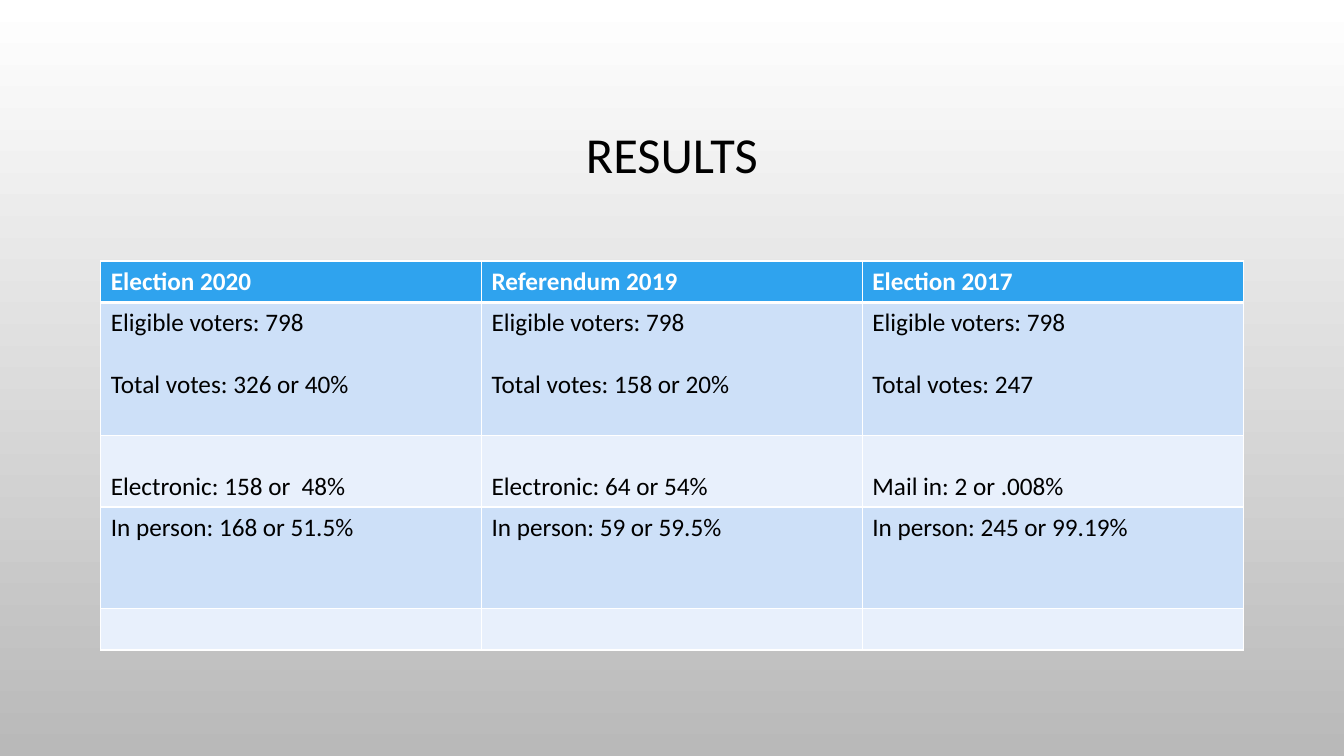
from lxml import etree
from pptx import Presentation
from pptx.dml.color import RGBColor
from pptx.enum.text import MSO_ANCHOR, PP_ALIGN
from pptx.oxml.ns import qn
from pptx.util import Inches, Pt

CENTER = PP_ALIGN.CENTER
TOP, MIDDLE, BOTTOM = MSO_ANCHOR.TOP, MSO_ANCHOR.MIDDLE, MSO_ANCHOR.BOTTOM
TITLE_ONLY = 5

HEADINGS = ["Election 2020", "Referendum 2019", "Election 2017"]
TURNOUT = [
    "Eligible voters: 798\nTotal votes: 326 or 40%",
    "Eligible voters: 798\nTotal votes: 158 or 20%",
    "Eligible voters: 798\nTotal votes: 247",
]
REMOTE = ["Electronic: 158 or  48%", "Electronic: 64 or 54%", "Mail in: 2 or .008%"]
IN_PERSON = ["In person: 168 or 51.5%", "In person: 59 or 59.5%", "In person: 245 or 99.19%"]

# Texts, row height in inches, vertical anchor
RESULT_ROWS = [
    (HEADINGS, 0.41, TOP),
    (TURNOUT, 1.32, TOP),
    (REMOTE, 0.71, BOTTOM),
    (IN_PERSON, 1.01, TOP),
    ([""] * 3, 0.41, TOP),
]


def rgb(value):
    return RGBColor.from_string(value)


class ResultsSlide:
    font = "Calibri"
    ink = "000000"
    white = "FFFFFF"
    header_fill = "2FA3EE"
    band_fills = ("E8F0FC", "CDE0F8")

    def __init__(self, presentation):
        layout = presentation.slide_layouts[TITLE_ONLY]
        self.slide = presentation.slides.add_slide(layout)

    def background(self, top_color, bottom_color):
        fill = self.slide.background.fill
        fill.gradient()
        fill.gradient_angle = 270
        for stop, color in zip(fill.gradient_stops, (top_color, bottom_color)):
            stop.color.rgb = rgb(color)

    def style(self, paragraph, size, color, bold=False):
        font = paragraph.font
        font.name, font.size, font.bold = self.font, Pt(size), bold
        font.color.rgb = rgb(color)

    def title(self, text, left, top, width, height):
        title = self.slide.shapes.title
        title.left, title.top = Inches(left), Inches(top)
        title.width, title.height = Inches(width), Inches(height)
        title.text_frame.text = text
        title.text_frame.vertical_anchor = MIDDLE
        heading = title.text_frame.paragraphs[0]
        heading.alignment = CENTER
        heading.line_spacing = 0.9
        self.style(heading, 36, self.ink)

    def borders(self, cell, top, bottom):
        """Draw white cell borders; top and bottom are widths in points."""
        properties = cell._tc.get_or_add_tcPr()
        for side, width in (("L", 1), ("R", 1), ("T", top), ("B", bottom)):
            line = etree.SubElement(properties, qn(f"a:ln{side}"), w=str(Pt(width)))
            fill = etree.SubElement(line, qn("a:solidFill"))
            etree.SubElement(fill, qn("a:srgbClr"), val=self.white)

    def cell(self, cell, text, row, anchor):
        header = row == 0
        self.borders(cell, top=3 if row == 1 else 1, bottom=3 if header else 1)
        cell.fill.solid()
        cell.fill.fore_color.rgb = rgb(self.header_fill if header else self.band_fills[row % 2])
        cell.vertical_anchor = anchor
        cell.text = text
        for index, paragraph in enumerate(cell.text_frame.paragraphs):
            if index:
                paragraph.space_before = Pt(22)
            self.style(paragraph, 18, self.white if header else self.ink, header)

    def table(self, rows, left, top, width):
        height = sum(row_height for _, row_height, _ in rows)
        table = self.slide.shapes.add_table(
            len(rows), len(rows[0][0]),
            Inches(left), Inches(top), Inches(width), Inches(height)).table
        for row, (texts, row_height, anchor) in enumerate(rows):
            table.rows[row].height = Inches(row_height)
            for column, text in enumerate(texts):
                self.cell(table.cell(row, column), text, row, anchor)


def main():
    presentation = Presentation()
    presentation.slide_width = Inches(13.33)
    presentation.slide_height = Inches(7.5)
    results = ResultsSlide(presentation)
    results.background("FFFFFF", "B9B9B9")
    results.title("RESULTS", 1, 0.68, 11.33, 1.75)
    results.table(RESULT_ROWS, 1, 2.59, 11.33)
    presentation.save("out.pptx")


if __name__ == "__main__":
    main()
